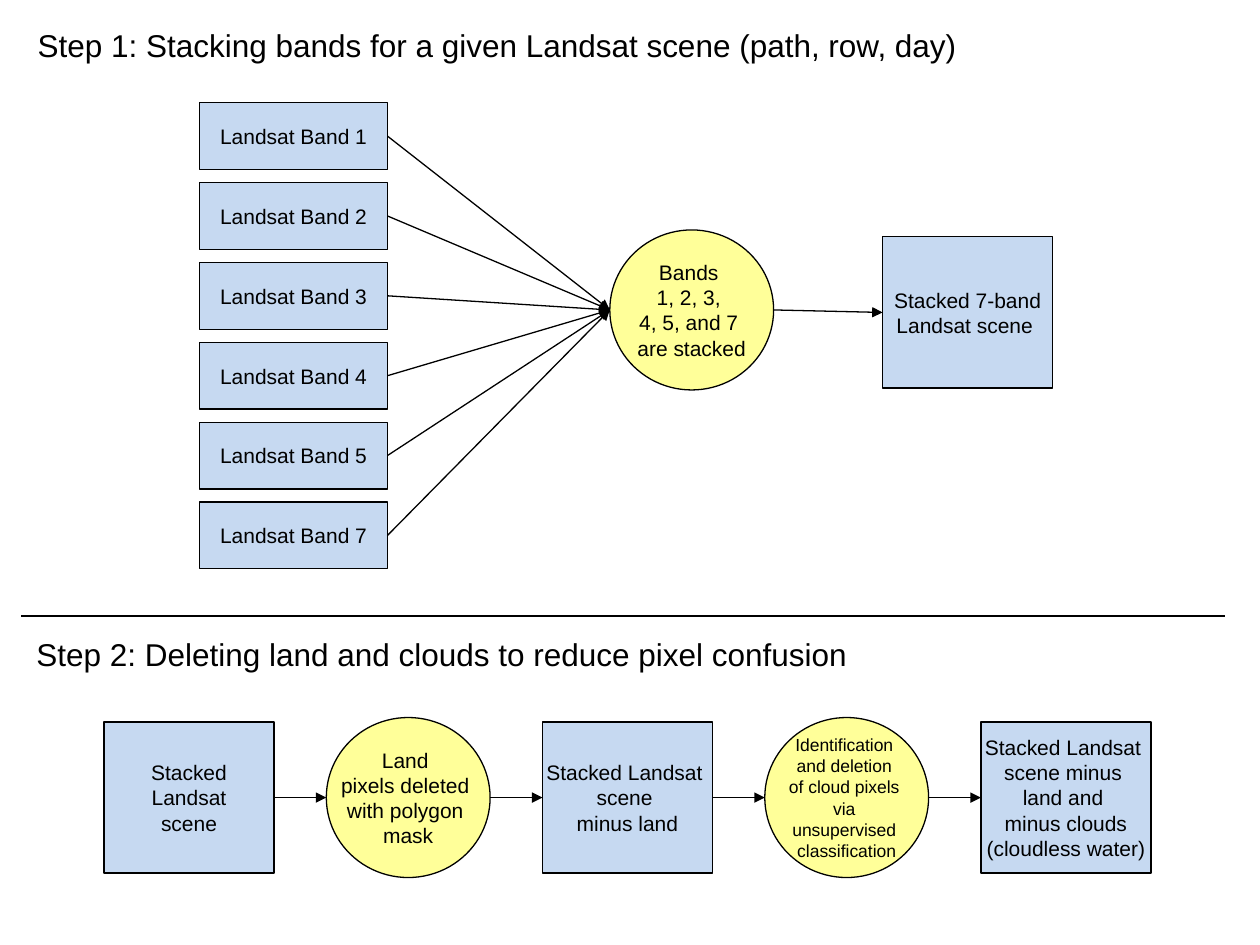
from lxml.etree import SubElement
from pptx import Presentation
from pptx.dml.color import RGBColor
from pptx.enum.shapes import MSO_CONNECTOR, MSO_SHAPE
from pptx.enum.text import MSO_ANCHOR, PP_ALIGN
from pptx.oxml.ns import qn
from pptx.util import Inches, Pt

BLACK, BLUE, YELLOW = "000000", "C6D9F1", "FFFF99"
LEFT, RIGHT = 1, 3
BANDS = (1, 2, 3, 4, 5, 7)
STEP_2 = (
    "Stacked\nLandsat\nscene",
    "Land \npixels deleted \nwith polygon \nmask",
    "Stacked Landsat \nscene \nminus land",
    "Identification \nand deletion \nof cloud pixels \nvia \nunsupervised \nclassification",
    "Stacked Landsat \nscene minus \nland and \nminus clouds\n(cloudless water)",
)


def rgb(color):
    return RGBColor.from_string(color)


def set_font(p, size):
    p.font.name = "Arial"
    p.font.size = Pt(size)
    p.font.color.rgb = rgb(BLACK)


def add_node(slide, kind, fill, cx, cy, w, h, text, size=12):
    sp = slide.shapes.add_shape(
        kind, Inches(cx - w / 2), Inches(cy - h / 2), Inches(w), Inches(h))
    sp.shadow.inherit = False
    sp.fill.solid()
    sp.fill.fore_color.rgb = rgb(fill)
    sp.line.color.rgb = rgb(BLACK)
    sp.line.width = Pt(0.75)
    tf = sp.text_frame
    tf.word_wrap = False
    tf.vertical_anchor = MSO_ANCHOR.MIDDLE
    tf.text = text
    for p in tf.paragraphs:
        p.alignment = PP_ALIGN.CENTER
        set_font(p, size)
    return sp


def add_data(slide, cx, cy, text, w=1.35, h=1.2):
    return add_node(slide, MSO_SHAPE.FLOWCHART_PROCESS, BLUE, cx, cy, w, h, text)


def add_process(slide, cx, cy, text, size=12):
    return add_node(slide, MSO_SHAPE.OVAL, YELLOW, cx, cy, 1.3, 1.27, text, size)


def add_line(slide, x1, y1, x2, y2):
    line = slide.shapes.add_connector(MSO_CONNECTOR.STRAIGHT, x1, y1, x2, y2)
    line.line.color.rgb = rgb(BLACK)
    line.line.width = Pt(0.75)
    SubElement(line._element.spPr, qn("a:effectLst"))
    return line


def is_data(sp):
    return sp.auto_shape_type == MSO_SHAPE.FLOWCHART_PROCESS


def add_arrow(slide, source, target):
    arrow = add_line(
        slide, source.left + source.width, source.top + source.height // 2,
        target.left, target.top + target.height // 2)
    SubElement(arrow.line._get_or_add_ln(), qn("a:tailEnd"), type="triangle")
    if is_data(source):
        arrow.begin_connect(source, RIGHT)
    if is_data(target):
        arrow.end_connect(target, LEFT)


def add_title(slide, x, y, text):
    box = slide.shapes.add_textbox(Inches(x), Inches(y), Inches(9.38), Inches(0.4))
    tf = box.text_frame
    tf.word_wrap = True
    tf.text = text
    set_font(tf.paragraphs[0], 18)


def add_stacking(slide):
    add_title(slide, 0.2, 0.16,
              "Step 1: Stacking bands for a given Landsat scene (path, row, day)")
    stack = add_process(slide, 5.49, 2.46,
                        "Bands \n1, 2, 3, \n4, 5, and 7 \nare stacked")
    scene = add_data(slide, 7.68, 2.48, "Stacked 7-band\nLandsat scene ")
    for i, number in enumerate(BANDS):
        band = add_data(slide, 2.33, 1.08 + 0.634 * i,
                        f"Landsat Band {number}", 1.49, 0.53)
        add_arrow(slide, band, stack)
    add_arrow(slide, stack, scene)


def add_deleting(slide):
    add_title(slide, 0.19, 4.99,
              "Step 2: Deleting land and clouds to reduce pixel confusion")
    nodes = []
    for i, text in enumerate(STEP_2):
        cx, cy = 1.5 + 1.74 * i, 6.33
        if i % 2:
            nodes.append(add_process(slide, cx, cy, text, 10 if i == 3 else 12))
        else:
            nodes.append(add_data(slide, cx, cy, text))
    for source, target in zip(nodes, nodes[1:]):
        add_arrow(slide, source, target)


def main():
    prs = Presentation()
    prs.slide_width, prs.slide_height = Inches(10), Inches(7.5)
    slide = prs.slides.add_slide(prs.slide_layouts[6])
    add_stacking(slide)
    add_line(slide, Inches(0.17), Inches(4.89), Inches(9.72), Inches(4.89))
    add_deleting(slide)
    prs.save("out.pptx")


if __name__ == "__main__":
    main()
